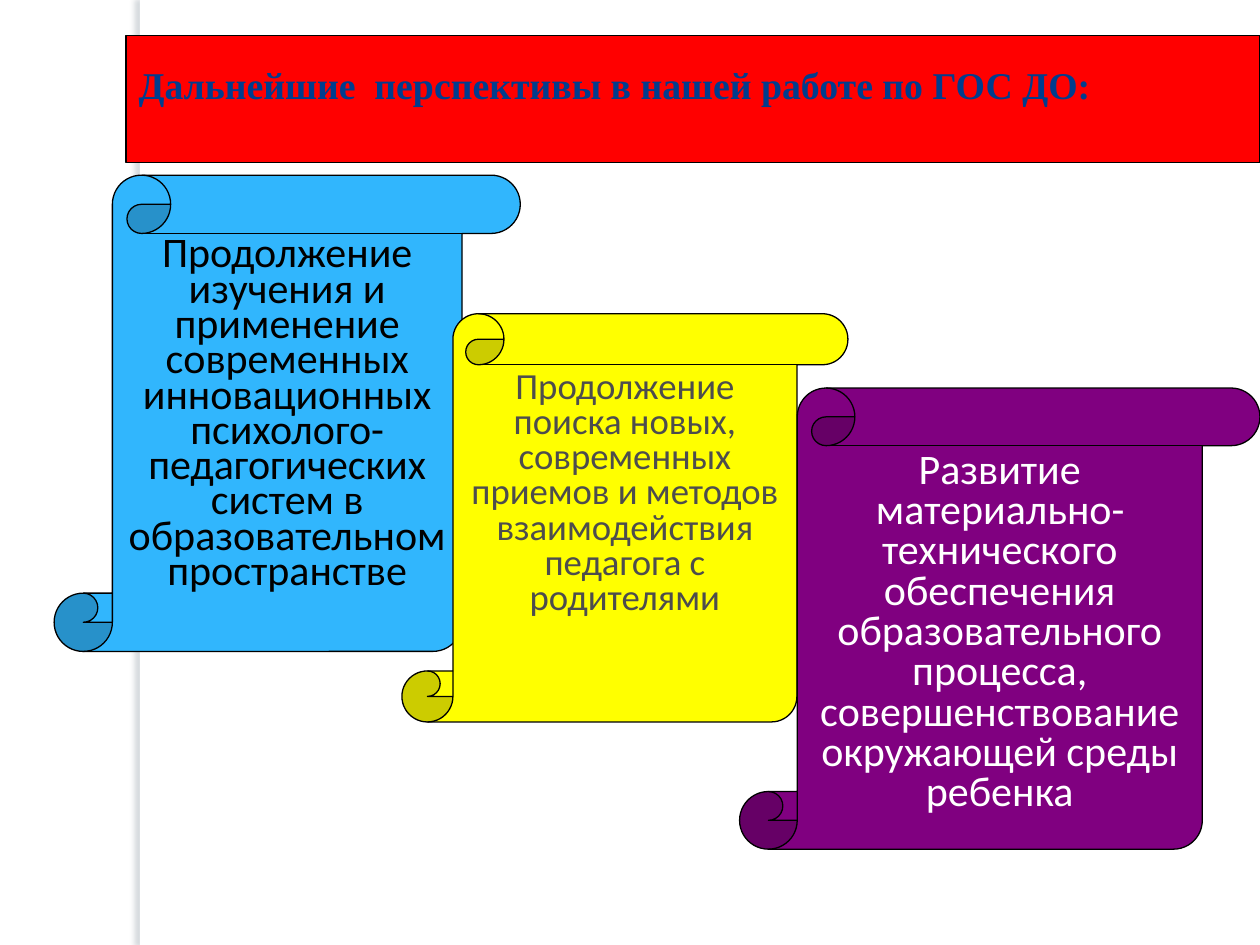
from dataclasses import dataclass

from lxml import etree
from pptx import Presentation
from pptx.dml.color import RGBColor
from pptx.enum.shapes import MSO_SHAPE
from pptx.enum.text import MSO_ANCHOR, MSO_AUTO_SIZE, PP_ALIGN
from pptx.oxml.ns import qn
from pptx.util import Inches, Pt

RECTANGLE = MSO_SHAPE.RECTANGLE
SCROLL = MSO_SHAPE.VERTICAL_SCROLL
TOP = MSO_ANCHOR.TOP
LEFT, CENTER = PP_ALIGN.LEFT, PP_ALIGN.CENTER
NO_AUTOFIT = MSO_AUTO_SIZE.NONE

COLORS = {
    "white": "FFFFFF",
    "black": "000000",
    "red": "FF0000",
    "navy": "003D8E",
    "blue": "31B6FD",
    "yellow": "FFFF00",
    "purple": "800080",
    "gray": "4D4D4D",
    "shadow": "61737F",
}


@dataclass(frozen=True)
class Box:
    left: float
    top: float
    width: float
    height: float

    def lengths(self) -> tuple:
        return tuple(Inches(v) for v in (self.left, self.top, self.width, self.height))


@dataclass(frozen=True)
class Goal:
    box: Box
    fill: str
    text: str
    text_color: str
    size: float
    line_spacing: float


GOALS = [
    Goal(Box(0.43, 1.39, 3.7, 3.78), "blue",
         "Продолжение изучения и применение современных инновационных "
         "психолого-педагогических систем в образовательном пространстве",
         "black", 24, 0.7),
    Goal(Box(3.19, 2.49, 3.54, 3.24), "yellow",
         "Продолжение поиска новых, современных приемов и методов "
         "взаимодействия педагога с родителями",
         "gray", 21, 0.8),
    Goal(Box(5.87, 3.08, 4.13, 3.66), "purple",
         "Развитие материально-технического обеспечения образовательного "
         "процесса, совершенствование окружающей среды ребенка",
         "white", 24, 0.8),
]


def rgb(name: str) -> RGBColor:
    return RGBColor.from_string(COLORS[name])


def place(shape, box: Box) -> None:
    shape.left, shape.top, shape.width, shape.height = box.lengths()


def paint(shape, fill: str) -> None:
    shape.fill.solid()
    shape.fill.fore_color.rgb = rgb(fill)
    shape.line.color.rgb = rgb("black")
    shape.line.width = Pt(0.75)


def write(shape, text: str, font_name: str, size: float, color: str,
          alignment, line_spacing: float, bold: bool = False) -> None:
    frame = shape.text_frame
    frame.word_wrap = True
    frame.auto_size = NO_AUTOFIT
    frame.vertical_anchor = TOP
    paragraph = frame.paragraphs[0]
    properties = paragraph._p.get_or_add_pPr()
    properties.set("marL", "0")
    properties.set("indent", "0")
    etree.SubElement(properties, qn("a:buNone"))
    paragraph.alignment = alignment
    paragraph.line_spacing = line_spacing
    paragraph.space_before = Pt(0)
    run = paragraph.add_run()
    run.text = text
    run.font.name = font_name
    run.font.size = Pt(size)
    run.font.bold = bold
    run.font.color.rgb = rgb(color)


def add_side_band(slide) -> None:
    """Add the white strip at the very back, with its shadow cast to the left."""
    band = slide.shapes.add_shape(RECTANGLE, *Box(1.11, 0, 0.08, 7.5).lengths())
    band.fill.solid()
    band.fill.fore_color.rgb = rgb("white")
    band.line.fill.background()
    effects = etree.SubElement(band._element.spPr, qn("a:effectLst"))
    shadow = etree.SubElement(effects, qn("a:outerShdw"), blurRad=str(Pt(3)),
                              dist=str(Pt(3)), dir="10800000", rotWithShape="0")
    color = etree.SubElement(shadow, qn("a:srgbClr"), val=COLORS["shadow"])
    etree.SubElement(color, qn("a:alpha"), val="25000")
    slide.shapes._spTree.insert(2, band._element)


def fill_title(title) -> None:
    place(title, Box(1, 0.28, 9, 1.01))
    paint(title, "red")
    write(title, "Дальнейшие  перспективы в нашей работе по ГОС ДО:",
          "Times New Roman", 21.6, "navy", LEFT, 1, bold=True)
    title.text_frame.margin_top = Inches(0.21)


def shape_as_scroll(placeholder) -> None:
    """Give a placeholder that already has a position the scroll outline."""
    geometry = etree.Element(qn("a:prstGeom"), prst="verticalScroll")
    etree.SubElement(geometry, qn("a:avLst"))
    placeholder._element.spPr.find(qn("a:xfrm")).addnext(geometry)


def draw_goal(scroll, goal: Goal) -> None:
    paint(scroll, goal.fill)
    write(scroll, goal.text, "Calibri", goal.size, goal.text_color,
          CENTER, goal.line_spacing)


def main() -> None:
    presentation = Presentation()
    presentation.slide_width = Inches(10)
    presentation.slide_height = Inches(7.5)
    slide = presentation.slides.add_slide(presentation.slide_layouts[1])

    add_side_band(slide)
    fill_title(slide.shapes.title)

    first_goal, *other_goals = GOALS
    body = slide.placeholders[1]
    place(body, first_goal.box)
    shape_as_scroll(body)
    draw_goal(body, first_goal)

    for goal in other_goals:
        scroll = slide.shapes.add_shape(SCROLL, *goal.box.lengths())
        scroll.shadow.inherit = False
        draw_goal(scroll, goal)

    presentation.save("out.pptx")


if __name__ == "__main__":
    main()
